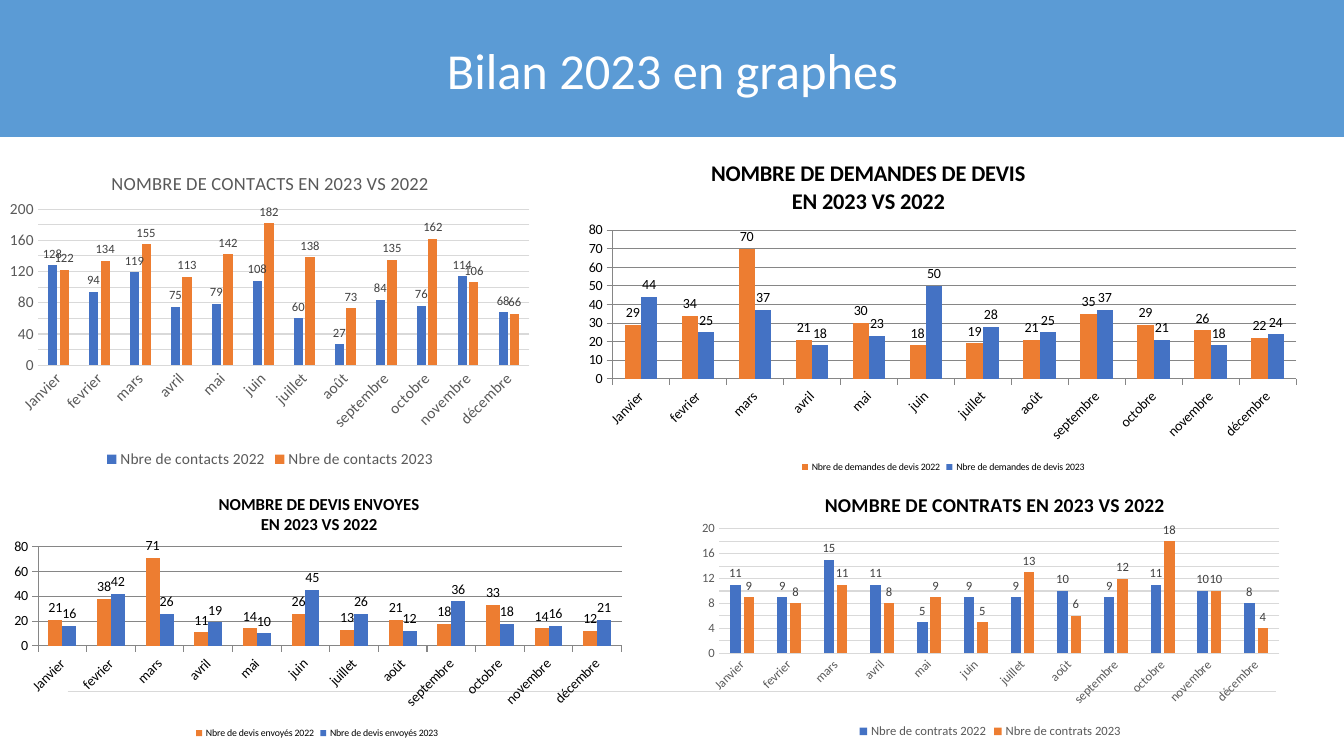
from dataclasses import dataclass

from lxml.etree import SubElement
from pptx import Presentation
from pptx.chart.chart import Chart
from pptx.chart.data import CategoryChartData
from pptx.dml.color import RGBColor
from pptx.enum.chart import XL_CHART_TYPE, XL_LABEL_POSITION, XL_LEGEND_POSITION, XL_TICK_MARK
from pptx.enum.shapes import MSO_CONNECTOR, MSO_SHAPE
from pptx.enum.text import MSO_ANCHOR, PP_ALIGN
from pptx.oxml.ns import qn
from pptx.slide import Slide
from pptx.util import Inches, Pt

SLIDE_WIDTH, SLIDE_HEIGHT = Inches(13.33), Inches(7.5)
MONTHS = ("Janvier", "fevrier", "mars", "avril", "mai", "juin", "juillet",
          "août", "septembre", "octobre", "novembre", "décembre")


@dataclass(frozen=True)
class Theme:
    font: str = "Calibri"
    band: str = "5B9BD5"
    white: str = "FFFFFF"
    black: str = "000000"
    blue: str = "4472C4"
    orange: str = "ED7D31"
    grey_text: str = "595959"
    label_text: str = "404040"
    pale_line: str = "D9D9D9"
    dark_line: str = "868686"
    heading_size: float = 36
    line_width: float = 0.75


THEME = Theme()


@dataclass(frozen=True)
class Box:
    """Percentages of the slide's width and height."""
    left: float
    top: float
    width: float
    height: float

    def lengths(self) -> tuple[int, int, int, int]:
        return (across(self.left), down(self.top), across(self.width), down(self.height))


@dataclass(frozen=True)
class ChartStyle:
    text: str
    label_text: str
    line: str
    value_line: bool
    tick: XL_TICK_MARK
    gap: int
    overlap: int
    colors: tuple[str, str]


PALE = ChartStyle(THEME.grey_text, THEME.label_text, THEME.pale_line, False,
                  XL_TICK_MARK.NONE, 219, -27, (THEME.blue, THEME.orange))
DARK = ChartStyle(THEME.black, THEME.black, THEME.dark_line, True,
                  XL_TICK_MARK.OUTSIDE, 150, 0, (THEME.orange, THEME.blue))


@dataclass(frozen=True)
class YearChart:
    """Monthly columns; plot and title_at are shares of the chart's own size."""
    title: tuple[str, ...]
    measure: str
    values_2022: tuple[int, ...]
    values_2023: tuple[int, ...]
    box: Box
    plot: tuple[float, float, float, float]
    title_at: tuple[float, float]
    style: ChartStyle
    maximum: int
    unit: int
    title_size: float
    title_color: str
    title_bold: bool
    axis_size: float
    legend_size: float
    label_size: float


CHARTS = (
    YearChart(("NOMBRE DE CONTRATS EN 2023 VS 2022",), "contrats",
              (11, 9, 15, 11, 5, 9, 9, 10, 9, 11, 10, 8),
              (9, 8, 11, 8, 9, 5, 13, 6, 12, 18, 10, 4),
              Box(51.24, 62.4, 44.86, 35.87), (0.05, 0.21, 0.93, 0.46), (0.22, 0.06),
              PALE, 20, 2, 14, THEME.black, True, 9, 9, 9),
    YearChart(("NOMBRE DE CONTACTS EN 2023 VS 2022",), "contacts",
              (128, 94, 119, 75, 79, 108, 60, 27, 84, 76, 114, 68),
              (122, 134, 155, 113, 142, 182, 138, 73, 135, 162, 106, 66),
              Box(0, 19.47, 40.21, 43.07), (0.07, 0.19, 0.91, 0.48), (0.2, 0.06),
              PALE, 200, 20, 13.2, THEME.grey_text, False, 11, 11, 9),
    YearChart(("NOMBRE DE DEMANDES DE DEVIS", "EN 2023 VS 2022"), "demandes de devis",
              (29, 34, 70, 21, 30, 18, 19, 21, 35, 29, 26, 22),
              (44, 25, 37, 18, 23, 50, 28, 25, 37, 21, 18, 24),
              Box(42.84, 18.4, 54.69, 44.67), (0.05, 0.27, 0.93, 0.44), (0.18, 0.05),
              DARK, 80, 10, 16, THEME.black, True, 10, 7, 10),
    YearChart(("NOMBRE DE DEVIS ENVOYES", "EN 2023 VS 2022"), "devis envoyés",
              (21, 38, 71, 11, 14, 26, 13, 21, 18, 33, 14, 12),
              (16, 42, 26, 19, 10, 45, 26, 12, 36, 18, 16, 21),
              Box(0, 62.67, 47.19, 35.6), (0.06, 0.27, 0.92, 0.37), (0.34, 0.06),
              DARK, 80, 20, 12, THEME.black, True, 10, 7, 10),
)


def across(percent: float) -> int:
    return round(SLIDE_WIDTH * percent / 100)


def down(percent: float) -> int:
    return round(SLIDE_HEIGHT * percent / 100)


def set_font(font, size: float, color: str, bold: bool = False) -> None:
    font.name, font.size, font.bold = THEME.font, Pt(size), bold
    font.color.rgb = RGBColor.from_string(color)


def set_line(line, color: str) -> None:
    line.color.rgb = RGBColor.from_string(color)
    line.width = Pt(THEME.line_width)


def place(parent, index: int, shares: tuple[float, ...], inner: bool = False) -> None:
    """Give a chart part a manual layout, as the child at the given index."""
    for old in parent.findall(qn("c:layout")):
        parent.remove(old)
    layout = SubElement(parent, qn("c:layout"))
    parent.insert(index, layout)
    manual = SubElement(layout, qn("c:manualLayout"))
    settings = [("layoutTarget", "inner")] if inner else []
    settings += [("xMode", "edge"), ("yMode", "edge")]
    settings += zip("xywh", map(str, shares))
    for name, value in settings:
        SubElement(manual, qn(f"c:{name}")).set("val", value)


def add_chart_title(chart: Chart, content: YearChart) -> None:
    chart.has_title = True
    frame = chart.chart_title.text_frame
    for number, text in enumerate(content.title):
        paragraph = frame.add_paragraph() if number else frame.paragraphs[0]
        run = paragraph.add_run()
        run.text = text
        set_font(run.font, content.title_size, content.title_color, content.title_bold)
    place(chart.chart_title.element, 1, content.title_at)


def style_axes(chart: Chart, content: YearChart) -> None:
    style = content.style
    for axis in (chart.category_axis, chart.value_axis):
        axis.major_tick_mark, axis.minor_tick_mark = style.tick, XL_TICK_MARK.NONE
        set_font(axis.tick_labels.font, content.axis_size, style.text)
        set_line(axis.format.line, style.line)
    body = chart.element.find(f".//{qn('c:catAx')}/{qn('c:txPr')}/{qn('a:bodyPr')}")
    body.set("rot", "-2700000")
    values = chart.value_axis
    values.minimum_scale, values.maximum_scale = 0, content.maximum
    values.major_unit = content.unit
    values.has_major_gridlines = True
    set_line(values.major_gridlines.format.line, style.line)
    if not style.value_line:
        values.format.line.fill.background()


def add_year_chart(slide: Slide, content: YearChart) -> None:
    style = content.style
    data = CategoryChartData()
    data.categories = MONTHS
    data.add_series(f"Nbre de {content.measure} 2022", content.values_2022)
    data.add_series(f"Nbre de {content.measure} 2023", content.values_2023)
    chart = slide.shapes.add_chart(
        XL_CHART_TYPE.COLUMN_CLUSTERED, *content.box.lengths(), data).chart
    set_font(chart.font, content.axis_size, THEME.black)
    add_chart_title(chart, content)
    style_axes(chart, content)
    chart.has_legend = True
    chart.legend.position = XL_LEGEND_POSITION.BOTTOM
    chart.legend.include_in_layout = False
    set_font(chart.legend.font, content.legend_size, style.text)
    plot = chart.plots[0]
    plot.gap_width, plot.overlap, plot.vary_by_categories = style.gap, style.overlap, False
    for series, color in zip(plot.series, style.colors):
        series.format.fill.solid()
        series.format.fill.fore_color.rgb = RGBColor.from_string(color)
        labels = series.data_labels
        labels.show_value, labels.position = True, XL_LABEL_POSITION.OUTSIDE_END
        set_font(labels.font, content.label_size, style.label_text)
    place(chart.element.find(f".//{qn('c:plotArea')}"), 0, content.plot, inner=True)


def add_frame(slide: Slide) -> None:
    """Draw the heading band, its text and the footer rule."""
    band = slide.shapes.add_shape(MSO_SHAPE.RECTANGLE, *Box(0, 0, 100, 18.13).lengths())
    band.shadow.inherit = False
    band.fill.solid()
    band.fill.fore_color.rgb = RGBColor.from_string(THEME.band)
    band.line.fill.background()
    rule = slide.shapes.add_connector(
        MSO_CONNECTOR.STRAIGHT, across(5.03), down(91.47), across(94.97), down(91.47))
    set_line(rule.line, THEME.pale_line)
    SubElement(rule.element.find(qn("p:spPr")), qn("a:effectLst"))
    heading = slide.shapes.add_textbox(*Box(5.03, 4, 90.02, 10.4).lengths())
    frame = heading.text_frame
    frame.word_wrap, frame.vertical_anchor = True, MSO_ANCHOR.MIDDLE
    paragraph = frame.paragraphs[0]
    paragraph.alignment = PP_ALIGN.CENTER
    run = paragraph.add_run()
    run.text = "Bilan 2023 en graphes"
    set_font(run.font, THEME.heading_size, THEME.white)


def main() -> None:
    presentation = Presentation()
    presentation.slide_width, presentation.slide_height = SLIDE_WIDTH, SLIDE_HEIGHT
    slide = presentation.slides.add_slide(presentation.slide_layouts[6])
    add_frame(slide)
    for content in CHARTS:
        add_year_chart(slide, content)
    presentation.save("out.pptx")


if __name__ == "__main__":
    main()
